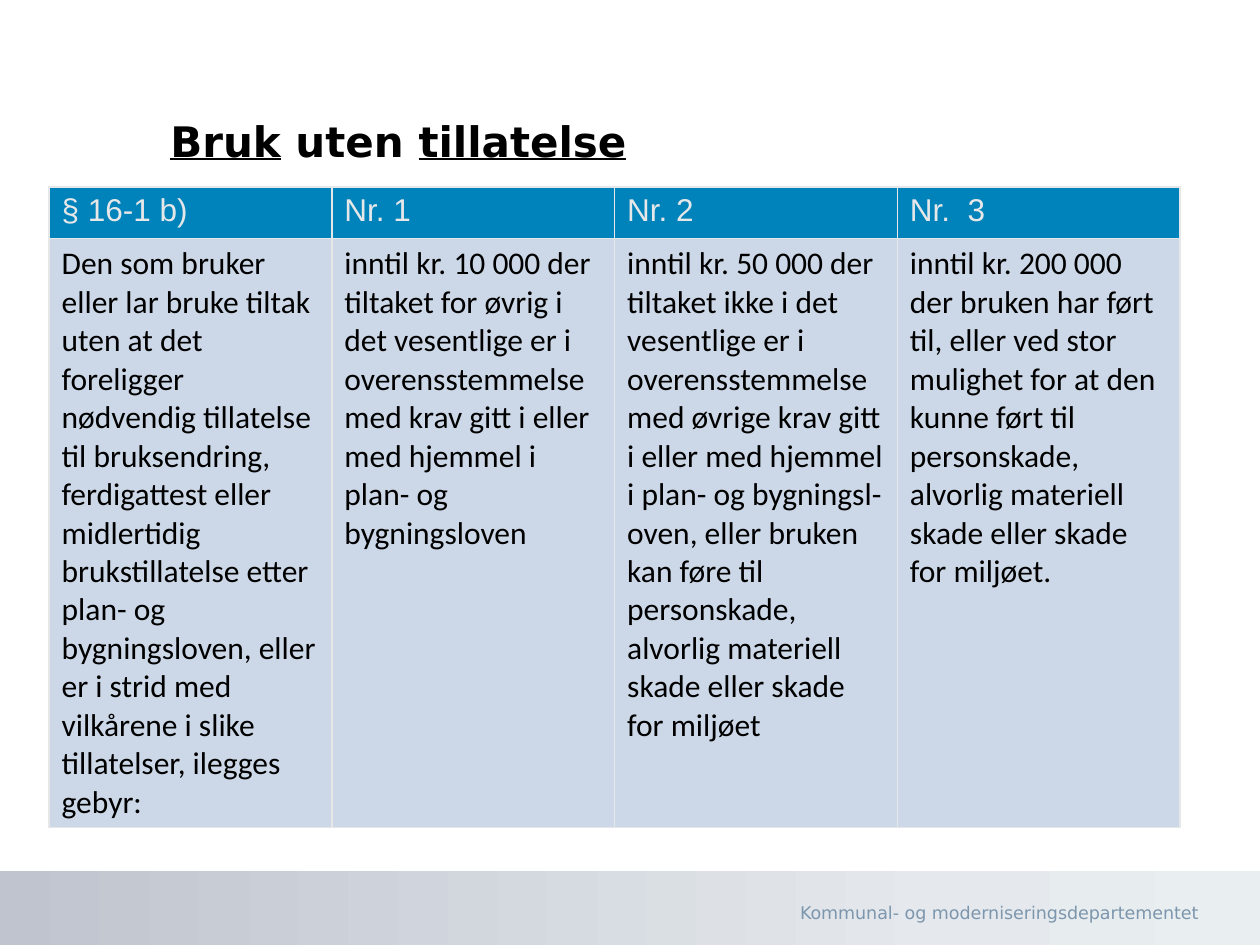
import copy

import pptx
import pptx.dml.color
import pptx.enum.shapes
import pptx.enum.text
import pptx.oxml
import pptx.oxml.ns
import pptx.util

Cm = pptx.util.Cm
Pt = pptx.util.Pt
ALIGN = pptx.enum.text.PP_ALIGN
ANCHOR = pptx.enum.text.MSO_ANCHOR

HEADING = [("Bruk", True), (" uten ", False), ("tillatelse", True)]
DEPARTMENT = "Kommunal- og moderniseringsdepartementet"
SANCTIONS = [
    ("§ 16-1 b)",
     "Den som bruker eller lar bruke tiltak uten at det foreligger nødvendig "
     "tillatelse til bruksendring, ferdigattest eller midlertidig "
     "brukstillatelse etter plan- og bygningsloven, eller er i strid med "
     "vilkårene i slike tillatelser, ilegges gebyr:"),
    ("Nr. 1",
     "inntil kr. 10 000 der tiltaket for øvrig i det vesentlige er i "
     "overensstemmelse med krav gitt i eller med hjemmel i plan- og "
     "bygningsloven"),
    ("Nr. 2",
     "inntil kr. 50 000 der tiltaket ikke i det vesentlige er i "
     "overensstemmelse med øvrige krav gitt i eller med hjemmel i plan- og "
     "bygningsl-oven, eller bruken kan føre til personskade, alvorlig "
     "materiell skade eller skade for miljøet"),
    ("Nr.  3",
     "inntil kr. 200 000 der bruken har ført til, eller ved stor mulighet "
     "for at den kunne ført til personskade, alvorlig materiell skade eller "
     "skade for miljøet."),
]
ROW_STYLES = [
    {"height": 1.04, "fill": "0082BA", "font": "Arial", "color": "E6E7E8"},
    {"height": 11.87, "fill": "CCD8E7", "font": "Calibri", "color": "000000"},
]
BAND_STOPS = [(0, "BFC4CE"), (0.75, "E5E9ED"), (1, "E9EEF1")]
GRID_COLOR = "E6E7E8"
COLUMN_WIDTH = 5.7


def rgb(value):
    return pptx.dml.color.RGBColor.from_string(value)


def write(frame, runs, font, size, color, bold=False, align=ALIGN.LEFT,
          anchor=ANCHOR.TOP):
    frame.word_wrap = True
    frame.vertical_anchor = anchor
    paragraph = frame.paragraphs[0]
    paragraph.alignment = align
    for words, underlined in runs:
        run = paragraph.add_run()
        run.text = words
        run.font.name = font
        run.font.size = Pt(size)
        run.font.color.rgb = rgb(color)
        run.font.bold = bold
        run.font.underline = underlined


def draw_borders(cell, color, width):
    properties = cell._tc.get_or_add_tcPr()
    for position, side in enumerate(("lnL", "lnR", "lnT", "lnB")):
        properties.insert(position, pptx.oxml.parse_xml(
            f'<a:{side} {pptx.oxml.ns.nsdecls("a")} w="{Pt(width)}">'
            f'<a:solidFill><a:srgbClr val="{color}"/></a:solidFill></a:{side}>'))


def add_band(slide, left, top, width, height):
    band = slide.shapes.add_shape(
        pptx.enum.shapes.MSO_SHAPE.RECTANGLE,
        Cm(left), Cm(top), Cm(width), Cm(height))
    band.shadow.inherit = False
    band.line.fill.background()
    band.fill.gradient()
    band.fill.gradient_angle = 0
    stops = band._element.spPr.find(".//" + pptx.oxml.ns.qn("a:gsLst"))
    stops.append(copy.deepcopy(stops[-1]))
    for stop, (position, color) in zip(band.fill.gradient_stops, BAND_STOPS):
        stop.position = position
        stop.color.rgb = rgb(color)


def add_sanctions(slide, left, top):
    table = slide.shapes.add_table(
        len(ROW_STYLES), len(SANCTIONS), Cm(left), Cm(top),
        Cm(COLUMN_WIDTH * len(SANCTIONS)),
        Cm(sum(style["height"] for style in ROW_STYLES))).table
    for row, style in zip(table.rows, ROW_STYLES):
        row.height = Cm(style["height"])
    for column, entries in enumerate(SANCTIONS):
        table.columns[column].width = Cm(COLUMN_WIDTH)
        for row, (entry, style) in enumerate(zip(entries, ROW_STYLES)):
            cell = table.cell(row, column)
            cell.fill.solid()
            cell.fill.fore_color.rgb = rgb(style["fill"])
            draw_borders(cell, GRID_COLOR, 1)
            write(cell.text_frame, [(entry, False)], style["font"], 18,
                  style["color"])


def main():
    deck = pptx.Presentation()
    deck.slide_width, deck.slide_height = Cm(25.4), Cm(19.05)
    slide = deck.slides.add_slide(deck.slide_layouts.get_by_name("Title Only"))

    add_band(slide, 0, 17.55, 25.4, 1.5)
    department = slide.shapes.add_textbox(Cm(15.6), Cm(18.06), Cm(8.81), Cm(0.69))
    write(department.text_frame, [(DEPARTMENT, False)], "DejaVu Sans", 10,
          "7C96AD", align=ALIGN.RIGHT, anchor=ANCHOR.MIDDLE)

    heading = slide.shapes.title
    heading.left, heading.top = Cm(3.18), Cm(1.57)
    heading.width, heading.height = Cm(16.89), Cm(1.9)
    heading.text_frame.auto_size = pptx.enum.text.MSO_AUTO_SIZE.NONE
    write(heading.text_frame, HEADING, "DejaVu Sans", 24, "000000",
          bold=True, anchor=ANCHOR.BOTTOM)

    add_sanctions(slide, 0.99, 3.77)
    deck.save("out.pptx")


if __name__ == "__main__":
    main()
